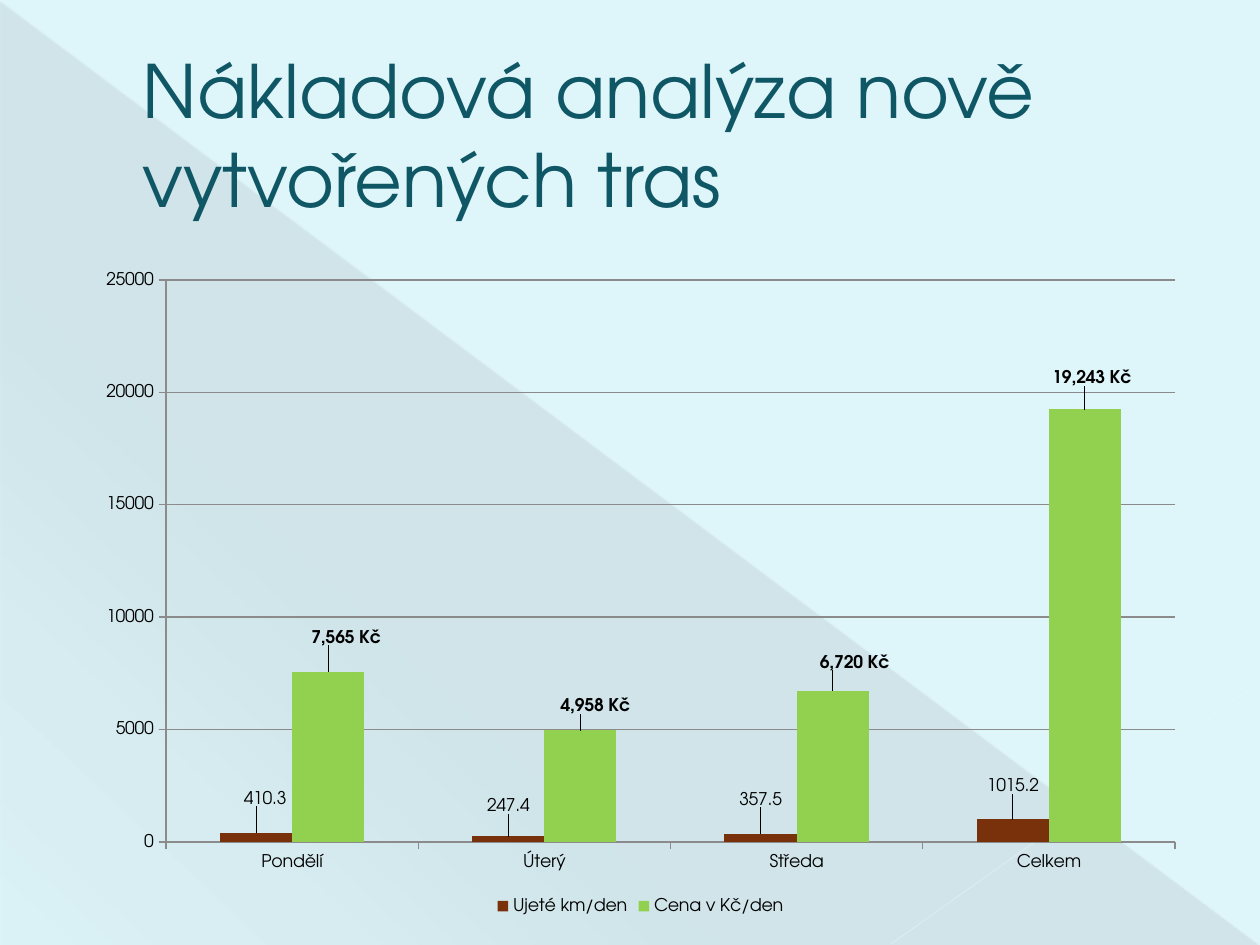
"""Builds the slide with the cost analysis of the newly created routes."""
from dataclasses import dataclass

from lxml import etree
from pptx import Presentation
from pptx.chart.data import CategoryChartData
from pptx.dml.color import RGBColor
from pptx.enum.chart import (XL_CHART_TYPE, XL_LABEL_POSITION,
                             XL_LEGEND_POSITION, XL_TICK_MARK)
from pptx.enum.shapes import MSO_CONNECTOR, MSO_SHAPE
from pptx.enum.text import MSO_ANCHOR
from pptx.oxml import parse_xml
from pptx.oxml.ns import nsdecls, qn
from pptx.util import Emu, Pt

CLUSTERED = XL_CHART_TYPE.COLUMN_CLUSTERED
OUTSIDE_END = XL_LABEL_POSITION.OUTSIDE_END
LEGEND_BOTTOM = XL_LEGEND_POSITION.BOTTOM
TICK_CROSS = XL_TICK_MARK.CROSS
STRAIGHT = MSO_CONNECTOR.STRAIGHT
RIGHT_TRIANGLE = MSO_SHAPE.RIGHT_TRIANGLE
MIDDLE = MSO_ANCHOR.MIDDLE

FONT = "TeX Gyre Adventor"
EMU_PER_PX = 914400 / 126
AXIS_COLOR = "8B8B8B"
DAYS = ["Pondělí", "Úterý", "Středa", "Celkem"]


@dataclass
class Box:
    left: int
    top: int
    width: int
    height: int


@dataclass
class Ray:
    start: tuple[int, int]
    end: tuple[int, int]
    color: str
    width: float
    opacity: int


@dataclass
class Measure:
    name: str
    values: list[float]
    color: str
    number_format: str
    bold: bool
    label_shifts: list[tuple[int, int]]


CHART_BOX = Box(84, 260, 1113, 659)
PLOT_BOX = Box(166, 280, 1009, 562)
RAYS = [
    Ray((0, 1), (1259, 944), "EBFBFF", 0.39, 35),
    Ray((1260, 682), (891, 944), "EDFCFF", 0.47, 45),
]
MEASURES = [
    Measure("Ujeté km/den", [410.3, 247.4, 357.5, 1015.2], "78310B", "General",
            False, [(9, -21), (0, -17), (0, -21), (0, -20)]),
    Measure("Cena v Kč/den", [7565, 4958, 6720, 19243], "92D050",
            '#,##0\\ "Kč"', True, [(18, -21), (15, -11), (22, -15), (7, -18)]),
]


def px(length: int) -> Emu:
    return Emu(round(length * EMU_PER_PX))


def place(box: Box) -> tuple[Emu, ...]:
    return px(box.left), px(box.top), px(box.width), px(box.height)


def rgb(color: str) -> RGBColor:
    return RGBColor.from_string(color)


def style_font(font, size: int, color: str, bold: bool = False) -> None:
    font.name = FONT
    font.size = Pt(size)
    font.bold = bold
    font.color.rgb = rgb(color)


def add_shade(slide, box: Box, color: str, stops: list[tuple[int, int]],
              angle: int) -> None:
    shade = slide.shapes.add_shape(RIGHT_TRIANGLE, *place(box))
    shade.shadow.inherit = False
    shade.line.fill.background()
    stop_xml = "".join(
        f'<a:gs pos="{position * 1000}"><a:srgbClr val="{color}">'
        f'<a:alpha val="{opacity * 1000}"/></a:srgbClr></a:gs>'
        for position, opacity in stops)
    gradient = parse_xml(
        f'<a:gradFill {nsdecls("a")} rotWithShape="1"><a:gsLst>{stop_xml}</a:gsLst>'
        f'<a:lin ang="{angle * 60000}" scaled="0"/></a:gradFill>')
    shade._element.spPr.find(qn("a:prstGeom")).addnext(gradient)


def add_ray(slide, ray: Ray) -> None:
    line = slide.shapes.add_connector(
        STRAIGHT, *map(px, ray.start), *map(px, ray.end))
    line.line.width = Pt(ray.width)
    line.line.color.rgb = rgb(ray.color)
    properties = line._element.spPr
    color = properties.find(".//" + qn("a:srgbClr"))
    etree.SubElement(color, qn("a:alpha"), val=str(ray.opacity * 1000))
    etree.SubElement(properties, qn("a:effectLst"))


def add_title(slide, box: Box, text: str) -> None:
    frame = slide.shapes.add_textbox(*place(box)).text_frame
    frame.word_wrap = True
    frame.vertical_anchor = MIDDLE
    frame.text = text
    heading = frame.paragraphs[0]
    heading._p.get_or_add_pPr().set("marL", str(px(67)))
    style_font(heading.runs[0].font, 42, "105766")


def manual_layout(settings: dict[str, str | float]):
    entries = "".join(f'<c:{key} val="{value}"/>' for key, value in settings.items())
    return parse_xml(f'<c:layout {nsdecls("c")}><c:manualLayout>{entries}'
                     '</c:manualLayout></c:layout>')


def fix_plot_area(chart, outer: Box, inner: Box) -> None:
    area = chart._chartSpace.find(".//" + qn("c:plotArea"))
    for previous in area.findall(qn("c:layout")):
        area.remove(previous)
    area.insert(0, manual_layout({
        "layoutTarget": "inner", "xMode": "edge", "yMode": "edge",
        "x": (inner.left - outer.left) / outer.width,
        "y": (inner.top - outer.top) / outer.height,
        "w": inner.width / outer.width,
        "h": inner.height / outer.height}))


def style_measure(series, measure: Measure, outer: Box) -> None:
    series.format.fill.solid()
    series.format.fill.fore_color.rgb = rgb(measure.color)
    series.invert_if_negative = False
    labels = series.data_labels
    labels.show_value = True
    labels.number_format = measure.number_format
    labels.number_format_is_linked = False
    labels.position = OUTSIDE_END
    style_font(labels.font, 10, "000000", measure.bold)
    for index, (dx, dy) in enumerate(measure.label_shifts):
        label = series.points[index].data_label
        label.position = OUTSIDE_END
        style_font(label.font, 10, "000000", measure.bold)
    for node, (dx, dy) in zip(series._element.xpath(".//c:dLbl"), measure.label_shifts):
        layout = manual_layout({"x": dx / outer.width, "y": dy / outer.height})
        node.find(qn("c:idx")).addnext(layout)
        number_format = etree.Element(qn("c:numFmt"), sourceLinked="0",
                                      formatCode=measure.number_format)
        layout.addnext(number_format)


def add_cost_chart(slide, box: Box) -> None:
    costs = CategoryChartData()
    costs.categories = DAYS
    for measure in MEASURES:
        costs.add_series(measure.name, measure.values)
    chart = slide.shapes.add_chart(CLUSTERED, *place(box), costs).chart
    style_font(chart.font, 10, "000000")
    chart.has_title = False
    chart.has_legend = True
    chart.legend.position = LEGEND_BOTTOM
    chart.legend.include_in_layout = False
    fix_plot_area(chart, box, PLOT_BOX)
    plot = chart.plots[0]
    plot.gap_width = 150
    plot.overlap = 0
    plot.vary_by_categories = False
    for series, measure in zip(plot.series, MEASURES):
        style_measure(series, measure, box)
    values = chart.value_axis
    values.minimum_scale, values.maximum_scale, values.major_unit = 0, 25000, 5000
    values.has_major_gridlines = True
    for axis in (chart.category_axis, values):
        axis.major_tick_mark = TICK_CROSS if axis is values else XL_TICK_MARK.OUTSIDE
    values.major_tick_mark = XL_TICK_MARK.OUTSIDE
    for part in (chart.category_axis, values, values.major_gridlines):
        part.format.line.color.rgb = rgb(AXIS_COLOR)
        part.format.line.width = Pt(0.75)


def main() -> None:
    presentation = Presentation()
    presentation.slide_width, presentation.slide_height = px(1260), px(945)
    slide = presentation.slides.add_slide(presentation.slide_layouts[6])
    slide.background.fill.solid()
    slide.background.fill.fore_color.rgb = rgb("DEF5FA")
    add_shade(slide, Box(1, 2, 1258, 943), "464646", [(0, 10), (70, 8), (100, 1)], 133)
    for ray in RAYS:
        add_ray(slide, ray)
    add_title(slide, Box(63, 37, 1134, 193), "Nákladová analýza nově vytvořených tras")
    add_cost_chart(slide, CHART_BOX)
    presentation.save("out.pptx")


if __name__ == "__main__":
    main()
